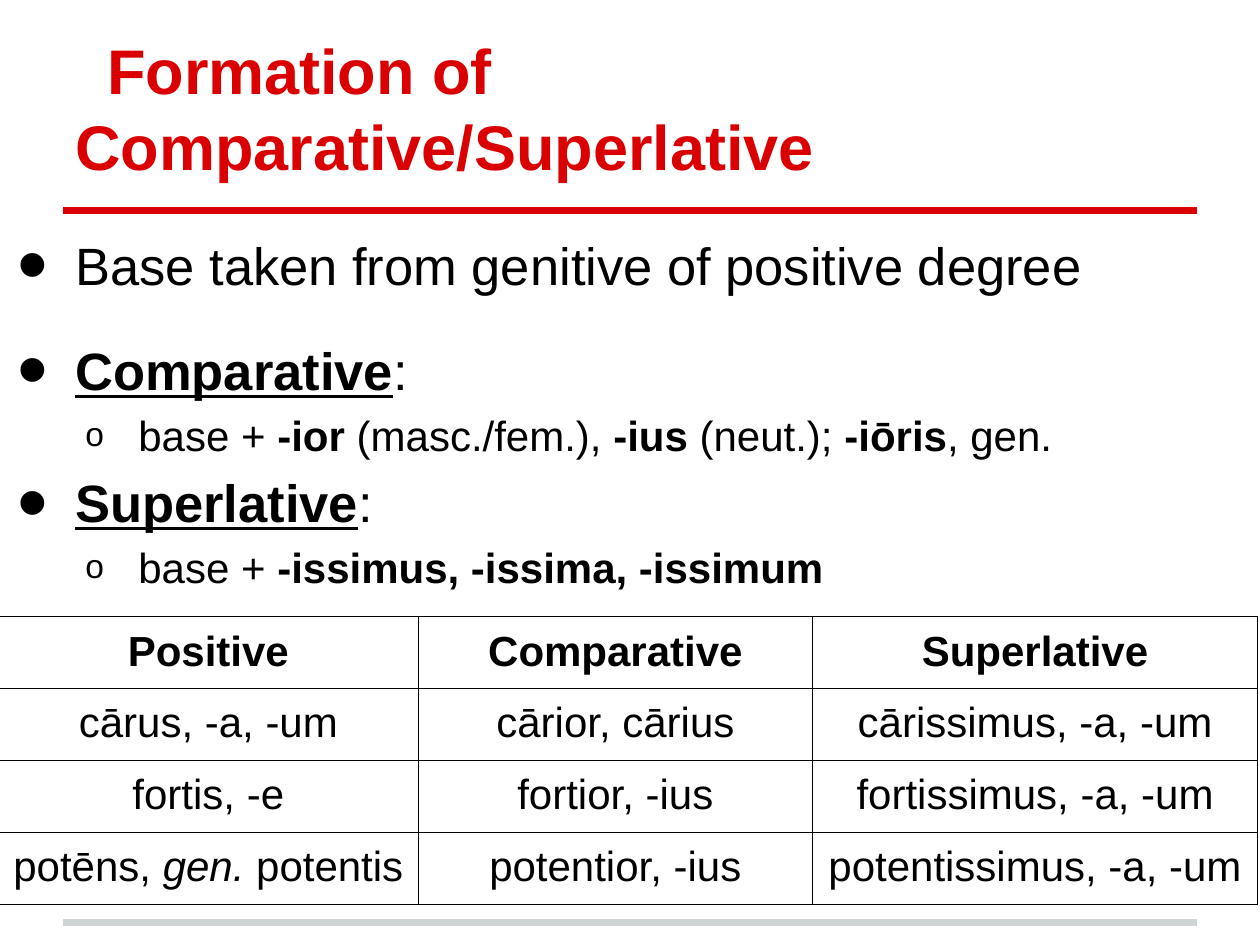
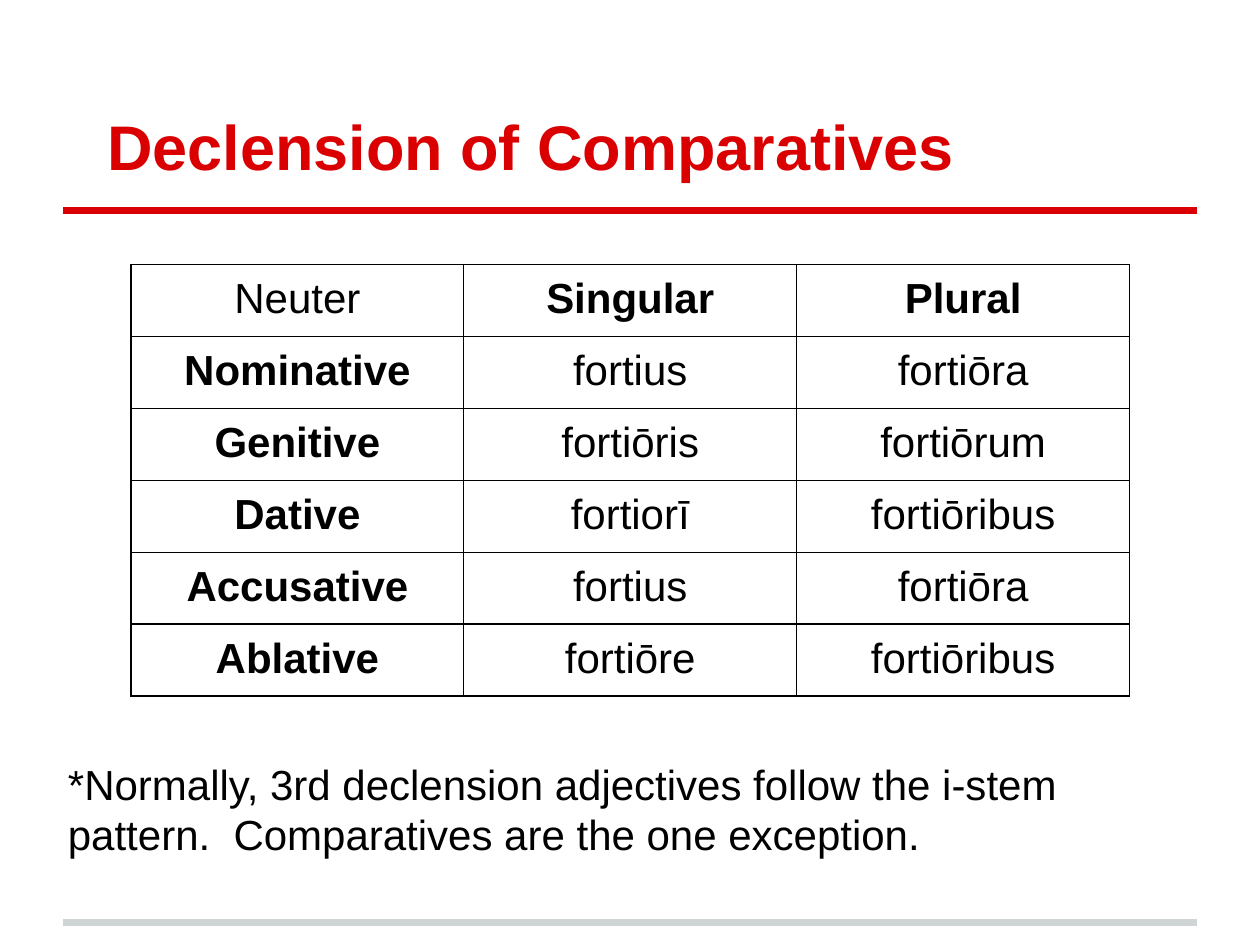
"""Build two slides on forming and declining Latin comparative adjectives."""
from dataclasses import dataclass

from lxml.etree import SubElement
from pptx import Presentation
from pptx.dml.color import RGBColor as Rgb
from pptx.enum.shapes import MSO_CONNECTOR as Connector
from pptx.enum.text import MSO_ANCHOR as Anchor, MSO_AUTO_SIZE as AutoSize, PP_ALIGN as Align
from pptx.oxml.ns import qn
from pptx.util import Cm, Pt


@dataclass(frozen=True)
class Theme:
    font: str = "Arial"
    red: Rgb = Rgb(0xDA, 0x00, 0x02)
    gray: Rgb = Rgb(0xCF, 0xD4, 0xD4)
    black: Rgb = Rgb(0, 0, 0)
    title: Pt = Pt(36)
    lead: Pt = Pt(30)
    text: Pt = Pt(24)
    rule: Pt = Pt(4)
    border: Pt = Pt(0.75)
    inset: Cm = Cm(0.25)


THEME = Theme()


def write(paragraph, pieces, size, color=THEME.black):
    """Fill a paragraph with (words, style) pieces; style letters are b, i and u."""
    for words, style in pieces:
        run = paragraph.add_run()
        run.text = words
        font = run.font
        font.name, font.size, font.color.rgb = THEME.font, size, color
        font.bold, font.italic, font.underline = (letter in style for letter in "biu")


def add_grid(slide, left, top, widths, rows):
    """Add a plain ruled table whose cells are lists of (words, style) pieces."""
    row_height = Cm(1.45)
    table = slide.shapes.add_table(len(rows), len(widths), left, top,
                                   sum(widths), row_height * len(rows)).table
    table.first_row = table.horz_banding = False
    for column, width in zip(table.columns, widths):
        column.width = width
    for r, row in enumerate(rows):
        table.rows[r].height = row_height
        for c, pieces in enumerate(row):
            cell = table.cell(r, c)
            cell.margin_left = cell.margin_right = THEME.inset
            cell.margin_top = cell.margin_bottom = Cm(0.23)
            paragraph = cell.text_frame.paragraphs[0]
            paragraph.alignment = Align.CENTER
            write(paragraph, pieces, THEME.text)
            properties = cell._tc.get_or_add_tcPr()
            for side in ("a:lnL", "a:lnR", "a:lnT", "a:lnB"):
                edge = SubElement(properties, qn(side), w=str(THEME.border))
                fill = SubElement(edge, qn("a:solidFill"))
                SubElement(fill, qn("a:srgbClr"), val=str(THEME.black))
            cell.fill.background()


prs = Presentation()
prs.slide_width, prs.slide_height = Cm(25.4), Cm(19.05)
formation = prs.slides.add_slide(prs.slide_layouts[1])
declension = prs.slides.add_slide(prs.slide_layouts[5])

for height, color in ((Cm(18.59), THEME.gray), (Cm(4.24), THEME.red)):
    rule = formation.shapes.add_connector(Connector.STRAIGHT, Cm(1.27), height, Cm(24.13), height)
    rule.line.color.rgb, rule.line.width = color, THEME.rule
    SubElement(rule.element.spPr, qn("a:effectLst"))
    prs.slide_master.element.cSld.spTree.append(rule.element)

for slide, heading in ((formation, "Formation of Comparative/Superlative"),
                       (declension, "Declension of Comparatives")):
    title = slide.shapes.title
    title.left, title.top, title.width, title.height = Cm(1.27), Cm(0.76), Cm(22.86), Cm(3.18)
    frame = title.text_frame
    frame.auto_size, frame.vertical_anchor = AutoSize.NONE, Anchor.BOTTOM
    frame.margin_left = frame.margin_right = frame.margin_top = frame.margin_bottom = THEME.inset
    paragraph = frame.paragraphs[0]
    paragraph.alignment = Align.LEFT
    paragraph._p.get_or_add_pPr().set("indent", str(Cm(0.64)))
    write(paragraph, [(heading, "b")], THEME.title, THEME.red)

rules = formation.placeholders[1]
rules.left, rules.top, rules.width, rules.height = Cm(0), Cm(4.45), Cm(25.4), Cm(7.49)
frame = rules.text_frame
frame.auto_size = AutoSize.NONE
frame.margin_left = frame.margin_right = frame.margin_top = frame.margin_bottom = THEME.inset
points = [
    (0, 6, [("Base taken from genitive of positive degree", "")]),
    (0, 24, [("Comparative", "bu"), (":", "")]),
    (1, 4.8, [("base + ", ""), ("-ior", "b"), (" (masc./fem.), ", ""), ("-ius", "b"),
              (" (neut.); ", ""), ("-iōris", "b"), (", gen.", "")]),
    (0, 6, [("Superlative", "bu"), (":", "")]),
    (1, 4.8, [("base + ", ""), ("-issimus, -issima, -issimum", "b")]),
]
levels = [(THEME.lead, Cm(1.27), Cm(-1.17), "167000", "•"),
          (THEME.text, Cm(2.54), Cm(-1.07), "80000", "o")]
for number, (level, gap, pieces) in enumerate(points):
    size, margin, indent, bullet_size, bullet = levels[level]
    paragraph = frame.add_paragraph() if number else frame.paragraphs[0]
    paragraph.level, paragraph.space_before = level, Pt(gap)
    properties = paragraph._p.get_or_add_pPr()
    properties.set("marL", str(margin))
    properties.set("indent", str(indent))
    bullet_color = SubElement(properties, qn("a:buClr"))
    SubElement(bullet_color, qn("a:srgbClr"), val=str(THEME.black))
    SubElement(properties, qn("a:buSzPct"), val=bullet_size)
    SubElement(properties, qn("a:buFont"), typeface=THEME.font)
    SubElement(properties, qn("a:buChar"), char=bullet)
    write(paragraph, pieces, size)

degrees = [
    ("Positive", "Comparative", "Superlative"),
    ("cārus, -a, -um", "cārior, cārius", "cārissimus, -a, -um"),
    ("fortis, -e", "fortior, -ius", "fortissimus, -a, -um"),
    ("potēns, gen. potentis", "potentior, -ius", "potentissimus, -a, -um"),
]
degree_cells = [[[(words, "" if r else "b")] for words in row] for r, row in enumerate(degrees)]
degree_cells[3][0] = [("potēns, ", ""), ("gen.", "i"), (" potentis", "")]
add_grid(formation, Cm(-0.03), Cm(12.43), [Cm(8.46), Cm(7.95), Cm(8.97)], degree_cells)

cases = [
    ("Neuter", "Singular", "Plural"),
    ("Nominative", "fortius", "fortiōra"),
    ("Genitive", "fortiōris", "fortiōrum"),
    ("Dative", "fortiorī", "fortiōribus"),
    ("Accusative", "fortius", "fortiōra"),
    ("Ablative", "fortiōre", "fortiōribus"),
]
case_cells = [[[(words, "b" if (r == 0) != (c == 0) else "")] for c, words in enumerate(row)]
              for r, row in enumerate(cases)]
add_grid(declension, Cm(2.64), Cm(5.33), [Cm(6.71)] * 3, case_cells)

exception = declension.shapes.add_textbox(Cm(1.12), Cm(15.04), Cm(22.86), Cm(2.92))
frame = exception.text_frame
frame.word_wrap = True
frame.margin_left = frame.margin_right = frame.margin_top = frame.margin_bottom = THEME.inset
write(frame.paragraphs[0], [("*Normally, 3rd declension adjectives follow the i-stem pattern.  "
                             "Comparatives are the one exception.", "")], THEME.text)

prs.save("out.pptx")
